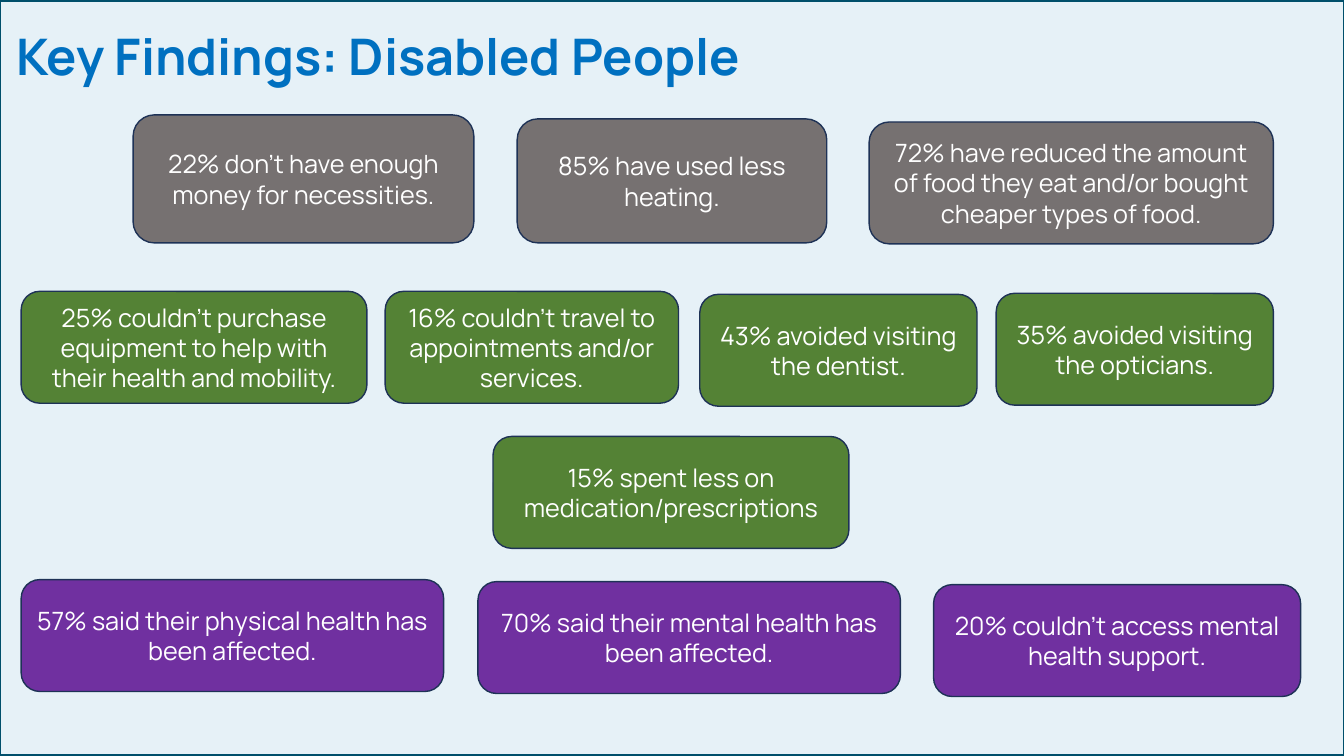
"""Build the key findings slide about disabled people."""
from pptx import Presentation
from pptx.dml.color import RGBColor
from pptx.enum.shapes import MSO_SHAPE
from pptx.enum.text import MSO_ANCHOR, PP_ALIGN
from pptx.util import Inches, Pt

RECT, ROUNDED = MSO_SHAPE.RECTANGLE, MSO_SHAPE.ROUNDED_RECTANGLE
TOP, MIDDLE = MSO_ANCHOR.TOP, MSO_ANCHOR.MIDDLE
LEFT, CENTER = PP_ALIGN.LEFT, PP_ALIGN.CENTER

FONT = "Manrope"
TITLE = "Key Findings: Disabled People"
GREY, GREEN, PURPLE = "767171", "548235", "7030A0"
GROUPS = [
    (GREY, [
        ("22% don’t have enough money for necessities.", 1.32, 1.14, 3.38, 1.27),
        ("85% have used less heating.", 5.13, 1.18, 3.07, 1.23),
        ("72% have reduced the amount of food they eat and/or bought "
         "cheaper types of food.", 8.62, 1.21, 4.01, 1.21),
    ]),
    (GREEN, [
        ("25% couldn’t purchase equipment to help with their health "
         "and mobility.", 0.21, 2.89, 3.43, 1.11),
        ("16% couldn’t travel to appointments and/or services.",
         3.82, 2.89, 2.91, 1.11),
        ("43% avoided visiting the dentist.", 6.94, 2.92, 2.75, 1.11),
        ("35% avoided visiting the opticians.", 9.88, 2.91, 2.75, 1.11),
        ("15% spent less on medication/prescriptions", 4.89, 4.33, 3.53, 1.11),
    ]),
    (PURPLE, [
        ("57% said their physical health has been affected.",
         0.21, 5.75, 4.19, 1.11),
        ("70% said their mental health has been affected.",
         4.74, 5.77, 4.19, 1.11),
        ("20% couldn’t access mental health support.", 9.26, 5.8, 3.64, 1.11),
    ]),
]


def rgb(color):
    return RGBColor.from_string(color)


def write(sp, text, size, color, align, anchor, bold=False):
    tf = sp.text_frame
    tf.word_wrap = True
    tf.vertical_anchor = anchor
    p = tf.paragraphs[0]
    p.text = text
    p.alignment = align
    p.font.name, p.font.size, p.font.bold = FONT, Pt(size), bold
    p.font.color.rgb = rgb(color)


def add_box(s, kind, box, fill, line, width):
    sp = s.shapes.add_shape(kind, *map(Inches, box))
    sp.shadow.inherit = False
    if fill:
        sp.fill.solid()
        sp.fill.fore_color.rgb = rgb(fill)
    else:
        sp.fill.background()
    sp.line.color.rgb = rgb(line)
    sp.line.width = Pt(width)
    return sp


def add_title(s):
    sp = s.shapes.title
    sp.left, sp.top, sp.width, sp.height = map(Inches, (0, 0.13, 11.61, 0.84))
    write(sp, TITLE, 36, "0070C0", LEFT, TOP, bold=True)
    tf = sp.text_frame
    tf.margin_left = tf.margin_right = Inches(0.16)
    tf.margin_top = tf.margin_bottom = Inches(0.12)


def main():
    prs = Presentation()
    prs.slide_width, prs.slide_height = Inches(13.33), Inches(7.5)
    s = prs.slides.add_slide(prs.slide_layouts[5])
    s.background.fill.solid()
    s.background.fill.fore_color.rgb = rgb("E6F1F7")
    add_box(s, RECT, (-0.01, 0, 13.35, 7.5), None, "004F6B", 3)
    add_title(s)
    for color, findings in GROUPS:
        for text, *box in findings:
            sp = add_box(s, ROUNDED, box, color, "1E3256", 1)
            write(sp, text, 18, "FFFFFF", CENTER, MIDDLE)
    prs.save("out.pptx")


if __name__ == "__main__":
    main()
